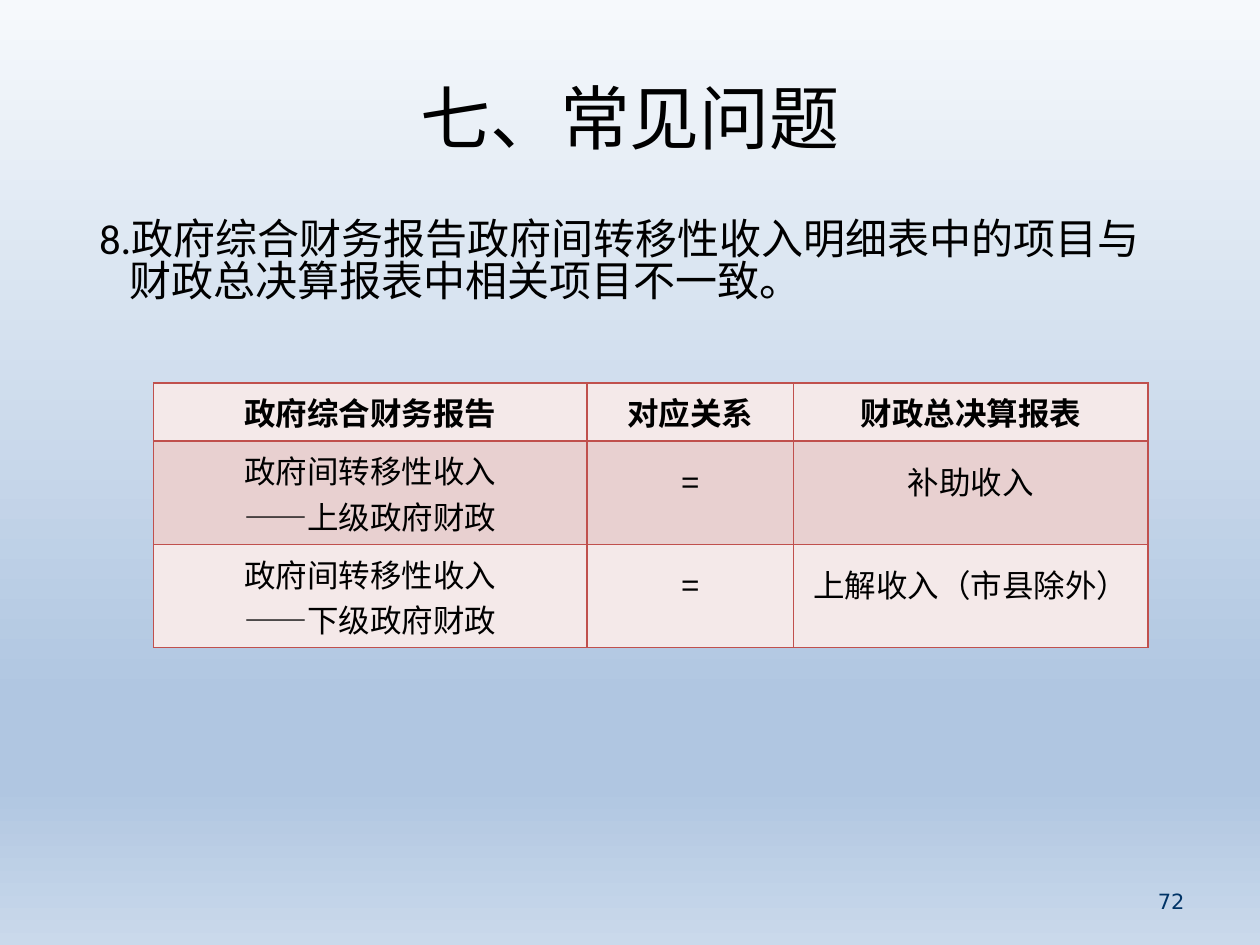
import copy

import pptx
import pptx.dml.color
import pptx.enum.text
import pptx.oxml
import pptx.oxml.ns
import pptx.util
from pptx.util import Inches

RGBColor = pptx.dml.color.RGBColor
PP_ALIGN = pptx.enum.text.PP_ALIGN
ANCHOR = pptx.enum.text.MSO_ANCHOR

BLACK = RGBColor(0x00, 0x00, 0x00)
NAVY = RGBColor(0x00, 0x33, 0x66)
RED = RGBColor(0xC0, 0x50, 0x4D)
LIGHT_PINK = RGBColor(0xF4, 0xE9, 0xE9)
PINK = RGBColor(0xE8, 0xD0, 0xD0)
BACKGROUND_STOPS = [
    (0, RGBColor(0xF6, 0xF9, 0xFC)),
    (74, RGBColor(0xB0, 0xC6, 0xE1)),
    (83, RGBColor(0xB0, 0xC6, 0xE1)),
    (100, RGBColor(0xCA, 0xD9, 0xEB)),
]

COLUMN_SHARES = [3.44, 1.64, 2.81]
ROW_HEIGHTS = [0.46, 0.82, 0.82]
ROWS = [
    ["政府综合财务报告", "对应关系", "财政总决算报表"],
    ["政府间转移性收入\n——上级政府财政", "=", "补助收入"],
    ["政府间转移性收入\n——下级政府财政", "=", "上解收入（市县除外）"],
]
BODY_LINE_SPACINGS = [None, 1.5, pptx.util.Pt(32)]


def paint_background(s):
    fill = s.background.fill
    fill.gradient()
    fill.gradient_angle = 270
    first = fill.gradient_stops[0]._gs
    stops = first.getparent()
    for gs in list(stops)[1:]:
        stops.remove(gs)
    for _ in BACKGROUND_STOPS[1:]:
        stops.append(copy.deepcopy(first))
    for stop, (percent, color) in zip(fill.gradient_stops, BACKGROUND_STOPS):
        stop.position = percent / 100
        stop.color.rgb = color


def format_text(tf, size, font, color=BLACK, align=PP_ALIGN.LEFT, bold=False):
    for p in tf.paragraphs:
        p.alignment = align
        for r in p.runs:
            r.font.size = pptx.util.Pt(size)
            r.font.name = font
            r.font.bold = bold
            r.font.color.rgb = color


def add_text(s, box, text, anchor=ANCHOR.MIDDLE, **style):
    sp = s.shapes.add_textbox(*[Inches(v) for v in box])
    tf = sp.text_frame
    tf.word_wrap = True
    tf.vertical_anchor = anchor
    tf.text = text
    format_text(tf, **style)
    return tf


def add_question(s, box):
    tf = add_text(
        s, box,
        "8.政府综合财务报告政府间转移性收入明细表中的项目与财政总决算报表中相关项目不一致。",
        anchor=ANCHOR.TOP, size=24, font="Calibri")
    p = tf.paragraphs[0]
    p.line_spacing = 0.84
    p.space_before = pptx.util.Pt(4)
    pPr = p._p.get_or_add_pPr()
    pPr.set("marL", str(Inches(0.38)))
    pPr.set("indent", str(Inches(-0.24)))


def set_borders(cell):
    tcPr = cell._tc.get_or_add_tcPr()
    for index, side in enumerate(["lnL", "lnR", "lnT", "lnB"]):
        line = pptx.oxml.parse_xml(
            f'<a:{side} {pptx.oxml.ns.nsdecls("a")} w="{pptx.util.Pt(1)}">'
            f'<a:solidFill><a:srgbClr val="{RED}"/></a:solidFill></a:{side}>')
        tcPr.insert(index, line)


def add_mapping_table(s, box):
    left, top, width, height = box
    table = s.shapes.add_table(
        len(ROWS), len(COLUMN_SHARES), *[Inches(v) for v in box]).table
    for column, share in zip(table.columns, COLUMN_SHARES):
        column.width = Inches(width * share / sum(COLUMN_SHARES))
    for row, row_height in zip(table.rows, ROW_HEIGHTS):
        row.height = Inches(height * row_height / sum(ROW_HEIGHTS))
    for i, texts in enumerate(ROWS):
        for j, text in enumerate(texts):
            cell = table.cell(i, j)
            cell.fill.solid()
            cell.fill.fore_color.rgb = PINK if i % 2 else LIGHT_PINK
            set_borders(cell)
            tf = cell.text_frame
            tf.text = text
            format_text(tf, 18, "Arial", align=PP_ALIGN.CENTER, bold=i == 0)
            if i > 0 and BODY_LINE_SPACINGS[j]:
                tf.paragraphs[0].line_spacing = BODY_LINE_SPACINGS[j]


def main():
    prs = pptx.Presentation()
    prs.slide_width, prs.slide_height = Inches(10), Inches(7.5)
    s = prs.slides.add_slide(prs.slide_layouts[6])
    paint_background(s)
    add_text(s, (0.5, 0.3, 9, 1.25), "七、常见问题",
             size=40, font="Arial", align=PP_ALIGN.CENTER)
    add_question(s, (0.55, 1.7, 8.91, 3.08))
    add_text(s, (7.17, 6.95, 2.33, 0.4), "72", size=12,
             font="DejaVu Sans", color=NAVY, align=PP_ALIGN.RIGHT)
    add_mapping_table(s, (1.22, 3.04, 7.89, sum(ROW_HEIGHTS)))
    prs.save("out.pptx")


if __name__ == "__main__":
    main()
